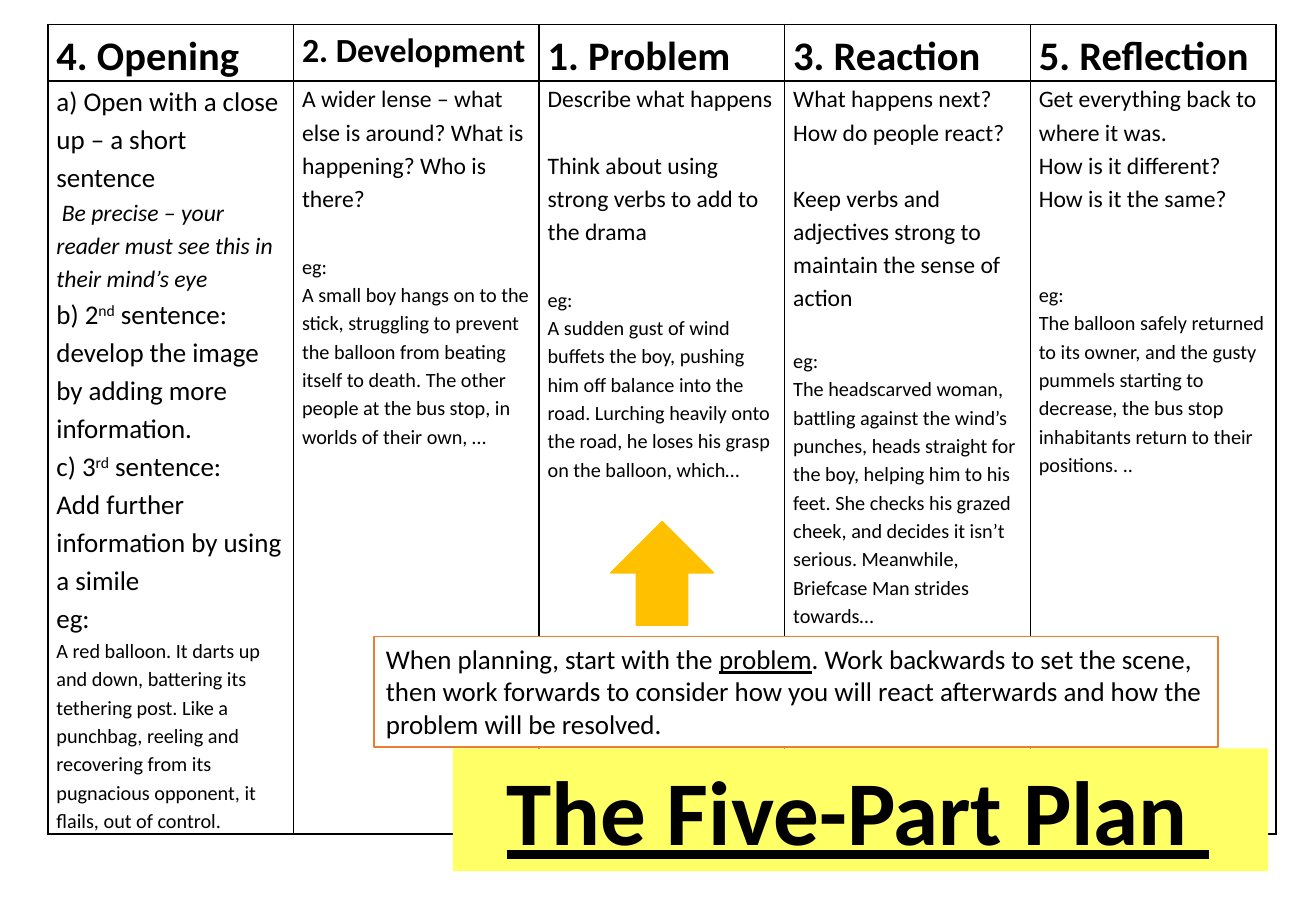
from lxml import etree
from pptx import Presentation
from pptx.dml.color import RGBColor
from pptx.enum.shapes import MSO_SHAPE
from pptx.enum.text import MSO_ANCHOR, MSO_AUTO_SIZE, PP_ALIGN
from pptx.oxml.ns import qn
from pptx.util import Cm, Pt

RECTANGLE, UP_ARROW = MSO_SHAPE.RECTANGLE, MSO_SHAPE.UP_ARROW
TOP, LEFT, GROW = MSO_ANCHOR.TOP, PP_ALIGN.LEFT, MSO_AUTO_SIZE.SHAPE_TO_FIT_TEXT
BLACK = RGBColor(0x00, 0x00, 0x00)
WHITE = RGBColor(0xFF, 0xFF, 0xFF)
YELLOW = RGBColor(0xFF, 0xFF, 0x66)
GOLD = RGBColor(0xFF, 0xC0, 0x00)
ORANGE = RGBColor(0xED, 0x7D, 0x31)
BORDER_TAGS = ("a:lnL", "a:lnR", "a:lnT", "a:lnB")

HEADING = {"size": Pt(24), "bold": True}
SMALL_HEADING = {"size": Pt(20), "bold": True}
STEP = {"size": Pt(16)}
ADVICE = {"size": Pt(14)}
HINT = {"size": Pt(14), "italic": True}
EXAMPLE = {"size": Pt(12)}
TITLE = {"size": Pt(54), "bold": True, "underline": True}
UNDERLINED = {"size": Pt(16), "underline": True}

ADVICE_GAP = 19.6
STEP_GAP = 22.4

PLAN = [
    (("4. Opening", HEADING), [
        (["a) Open with a close up – a short sentence"], STEP, 0),
        ([" Be precise – your reader must see this in their mind’s eye"], HINT, 0),
        (["b) 2", "nd", " sentence: develop the image by adding more information."], STEP, 0),
        (["c) 3", "rd", " sentence:"], STEP, 0),
        (["Add further information by using a simile"], STEP, 0),
        (["eg:"], STEP, 0),
        (["A red balloon. It darts up and down, battering its tethering post. "
          "Like a punchbag, reeling and recovering from its pugnacious opponent, "
          "it flails, out of control."], EXAMPLE, 0),
    ]),
    (("2. Development", SMALL_HEADING), [
        (["A wider lense – what else is around? What is happening? Who is there?"], ADVICE, 0),
        (["eg:"], EXAMPLE, STEP_GAP),
        (["A small boy hangs on to the stick, struggling to prevent the balloon "
          "from beating itself to death. The other people at the bus stop, in "
          "worlds of their own, …"], EXAMPLE, 0),
    ]),
    (("1. Problem", HEADING), [
        (["Describe what happens"], ADVICE, 0),
        (["Think about using strong verbs to add to the drama"], ADVICE, ADVICE_GAP),
        (["eg:"], EXAMPLE, STEP_GAP),
        (["A sudden gust of wind buffets the boy, pushing him off balance into "
          "the road. Lurching heavily onto the road, he loses his grasp on the "
          "balloon, which…"], EXAMPLE, 0),
    ]),
    (("3. Reaction", HEADING), [
        (["What happens next? How do people react?"], ADVICE, 0),
        (["Keep verbs and adjectives strong to maintain the sense of action"], ADVICE, ADVICE_GAP),
        (["eg:"], EXAMPLE, ADVICE_GAP),
        (["The headscarved woman, battling against the wind’s punches, heads "
          "straight for the boy, helping him to his feet. She checks his grazed "
          "cheek, and decides it isn’t serious. Meanwhile, Briefcase Man strides "
          "towards…"], EXAMPLE, 0),
    ]),
    (("5. Reflection", HEADING), [
        (["Get everything back to where it was."], ADVICE, 0),
        (["How is it different? How is it the same?"], ADVICE, 0),
        (["eg:"], EXAMPLE, 2 * ADVICE_GAP),
        (["The balloon safely returned to its owner, and the gusty pummels "
          "starting to decrease, the bus stop inhabitants return to their "
          "positions. .."], EXAMPLE, 0),
    ]),
]


def set_all(target, values):
    for name, value in values.items():
        setattr(target, name, value)


def add_span(para, text, style):
    span = para.add_run()
    span.text = text
    set_all(span.font, {"name": "Calibri", "bold": False, **style})
    span.font.color.rgb = BLACK
    if text in ("nd", "rd"):
        span.font._element.set("baseline", "30000")


def fill_cell(cell, paragraphs):
    set_all(cell, {"margin_left": Cm(0.18), "margin_right": Cm(0.18),
                   "margin_top": 0, "margin_bottom": 0, "vertical_anchor": TOP})
    frame = cell.text_frame
    for index, (texts, style, gap) in enumerate(paragraphs):
        para = frame.add_paragraph() if index else frame.paragraphs[0]
        set_all(para, {"line_spacing": 1.15, "space_before": Pt(gap)})
        for text in texts:
            add_span(para, text, style)
    properties = cell._tc.get_or_add_tcPr()
    for tag in BORDER_TAGS:
        border = etree.SubElement(properties, qn(tag), w=str(Pt(1)))
        fill = etree.SubElement(border, qn("a:solidFill"))
        etree.SubElement(fill, qn("a:srgbClr"), val=str(BLACK))
    cell.fill.background()


def add_plan_table(page, left, top, width, height):
    heading_height = Cm(1.17)
    table = page.shapes.add_table(2, len(PLAN), left, top, width, height).table
    set_all(table, {"first_row": False, "horz_banding": False})
    table.rows[0].height = heading_height
    table.rows[1].height = height - heading_height
    for index, ((heading, style), paragraphs) in enumerate(PLAN):
        table.columns[index].width = width // len(PLAN)
        fill_cell(table.cell(0, index), [([heading], style, 0)])
        fill_cell(table.cell(1, index), paragraphs)


def add_box(page, kind, box, fill, line=None):
    shape = page.shapes.add_shape(kind, *box)
    shape.shadow.inherit = False
    shape.fill.solid()
    shape.fill.fore_color.rgb = fill
    if line is None:
        shape.line.fill.background()
    else:
        shape.line.color.rgb = line
        shape.line.width = Pt(1)
    return shape


def add_text(shape, spans, frame_values):
    frame = shape.text_frame
    set_all(frame, {"word_wrap": True, "auto_size": GROW,
                    "vertical_anchor": TOP, **frame_values})
    para = frame.paragraphs[0]
    para.alignment = LEFT
    for text, style in spans:
        add_span(para, text, style)


def add_title(page, *box):
    banner = add_box(page, RECTANGLE, box, YELLOW)
    add_text(banner, [("The Five-Part Plan ", TITLE)], {"margin_left": Cm(1.12)})


def add_planning_note(page, left, top, width, height):
    note = add_box(page, RECTANGLE, (left, top, width, height), WHITE, ORANGE)
    add_text(note, [
        ("When planning, start with the ", STEP),
        ("problem", UNDERLINED),
        (". Work backwards to set the scene, then work forwards to consider how "
         "you will react afterwards and how the problem will be resolved.", STEP),
    ], {})
    arrow_box = (left + Cm(4.95), top - Cm(2.4), Cm(2.14), Cm(2.16))
    add_box(page, UP_ARROW, arrow_box, GOLD, GOLD)


def main():
    deck = Presentation()
    set_all(deck, {"slide_width": Cm(27.51), "slide_height": Cm(19.05)})
    page = deck.slides.add_slide(deck.slide_layouts[6])
    add_plan_table(page, Cm(1), Cm(0.51), Cm(25.67), Cm(16.46))
    add_title(page, Cm(9.47), Cm(15.65), Cm(17.04), Cm(2.57))
    add_planning_note(page, Cm(7.82), Cm(13.31), Cm(17.65), Cm(2.31))
    deck.save("out.pptx")


if __name__ == "__main__":
    main()
